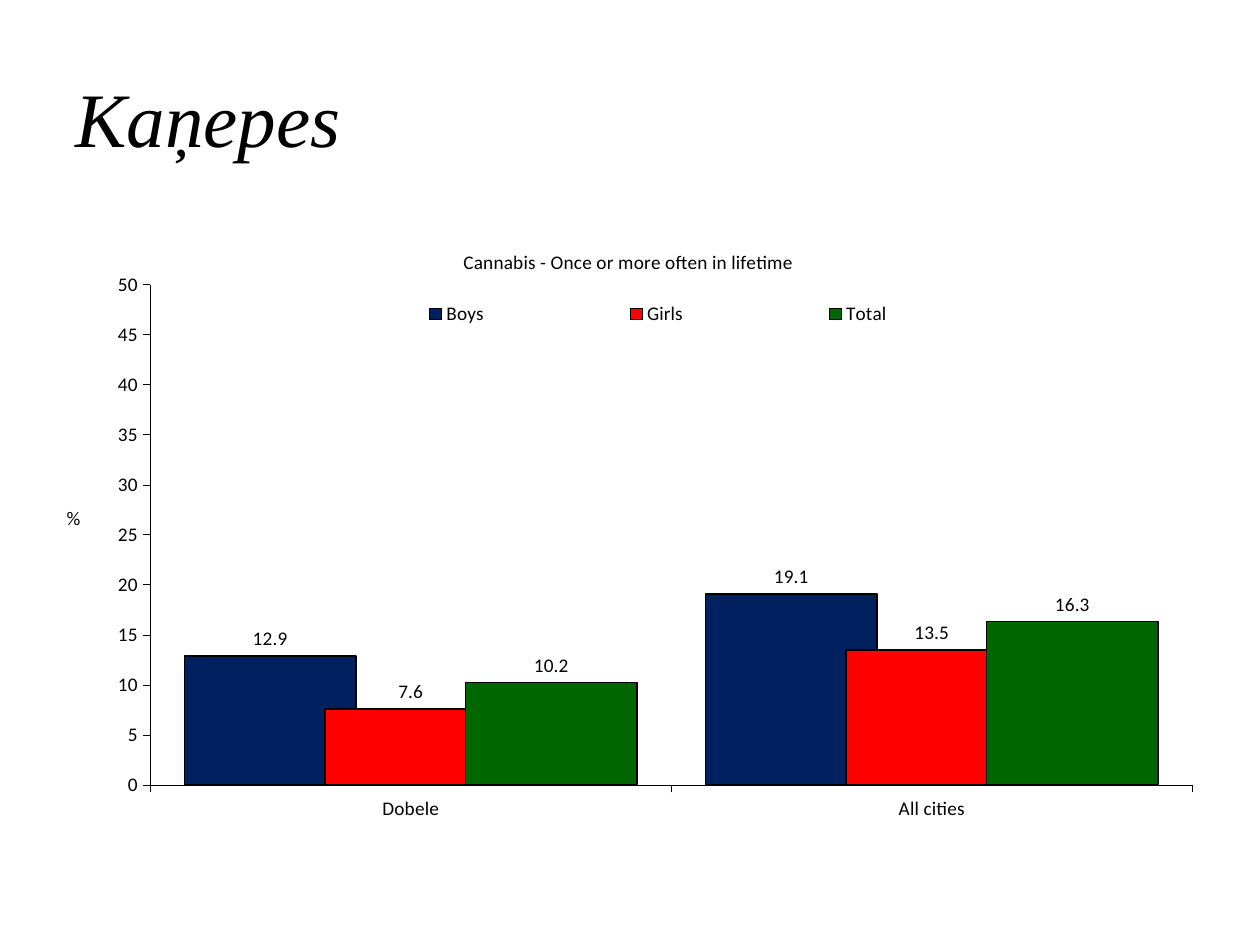
from lxml.etree import SubElement as Sub
from pptx import Presentation
from pptx.chart.data import CategoryChartData as ChartData
from pptx.dml.color import RGBColor as RGB
from pptx.enum.chart import (XL_CHART_TYPE as Kind, XL_LABEL_POSITION as Spot,
                             XL_LEGEND_POSITION as Side, XL_TICK_MARK as Tick)
from pptx.enum.text import MSO_ANCHOR as Anchor
from pptx.oxml.ns import qn
from pptx.util import Inches, Pt

# Content
TITLE = "Kaņepes"
HEAD = "Cannabis - Once or more often in lifetime"
UNIT = "%"
CATS = ["Dobele", "All cities"]
SERIES = [  # name, values, colour, line width
    ("Boys", (12.9, 19.1), "navy", 1),
    ("Girls", (7.6, 13.5), "red", 1),
    ("Total", (10.2, 16.3), "green", 0.75),
]
HEX = {"ink": "000000", "navy": "002060", "red": "FF0000", "green": "006600"}


def style(font, face="Calibri", size=11, italic=False):
    font.name, font.size = face, Pt(size)
    font.bold, font.italic = False, italic
    font.color.rgb = RGB.from_string(HEX["ink"])


def write(frame, text, **form):
    para = frame.paragraphs[0]
    run = para.add_run()
    run.text = text
    style(run.font, **form)


def outline(line, width):
    line.color.rgb = RGB.from_string(HEX["ink"])
    line.width = Pt(width)


def place(part, index, x, y, size=None, inner=False):
    """Set a manual chart layout, in fractions of the chart."""
    for old in part.findall(qn("c:layout")):
        part.remove(old)
    box = part.makeelement(qn("c:layout"))
    part.insert(index, box)
    man = Sub(box, qn("c:manualLayout"))
    rows = [("xMode", "edge"), ("yMode", "edge"), ("x", x), ("y", y)]
    if inner:
        rows.insert(0, ("layoutTarget", "inner"))
    if size:
        rows += zip("wh", size)
    for tag, val in rows:
        Sub(man, qn("c:" + tag)).set("val", str(val))


deck = Presentation()
deck.slide_width, deck.slide_height = Inches(10), Inches(7.5)
slide = deck.slides.add_slide(deck.slide_layouts[6])

# Slide title
box = slide.shapes.add_textbox(Inches(0.5), Inches(0.3), Inches(9), Inches(1.25))
box.text_frame.word_wrap = True
box.text_frame.vertical_anchor = Anchor.MIDDLE
write(box.text_frame, TITLE, face="Times New Roman", size=44, italic=True)

# Chart
data = ChartData(number_format="0.0")
data.categories = CATS
for name, vals, *_ in SERIES:
    data.add_series(name, vals)
chart = slide.shapes.add_chart(Kind.COLUMN_CLUSTERED, Inches(0.5), Inches(1.75),
                               Inches(9), Inches(4.95), data).chart
style(chart.font)
write(chart.chart_title.text_frame, HEAD)
chart.chart_title.include_in_layout = False
place(chart.chart_title._element, 1, 0.35, 0.04)
place(chart._chartSpace.chart.plotArea, 0, 0.077, 0.103, (0.919, 0.802), inner=True)

# Columns
plot = chart.plots[0]
plot.gap_width, plot.overlap, plot.vary_by_categories = 40, 18, False
for bars, (_, _, color, width) in zip(plot.series, SERIES):
    bars.format.fill.solid()
    bars.format.fill.fore_color.rgb = RGB.from_string(HEX[color])
    outline(bars.format.line, width)
    tags = bars.data_labels
    tags.show_value, tags.position = True, Spot.OUTSIDE_END
    tags.number_format, tags.number_format_is_linked = "0.0", False
    style(tags.font)

# Axes
cat, val = chart.category_axis, chart.value_axis
for axis in (cat, val):
    axis.has_major_gridlines = False
    axis.major_tick_mark, axis.minor_tick_mark = Tick.OUTSIDE, Tick.NONE
    outline(axis.format.line, 0.25)
    style(axis.tick_labels.font)
val.minimum_scale, val.maximum_scale, val.major_unit = 0, 50, 5
val.tick_labels.number_format = "0"
val.tick_labels.number_format_is_linked = False
unit = val.axis_title
write(unit.text_frame, UNIT)
unit.text_frame._txBody.bodyPr.set("rot", "0")
unit.text_frame._txBody.bodyPr.set("vert", "horz")
place(unit._element, 1, 0, 0.45)

# Legend
chart.has_legend = True
key = chart.legend
key.position, key.include_in_layout = Side.RIGHT, False
style(key.font)
place(key._element, 1, 0.2, 0.12, (0.65, 0.06))

deck.save("out.pptx")
